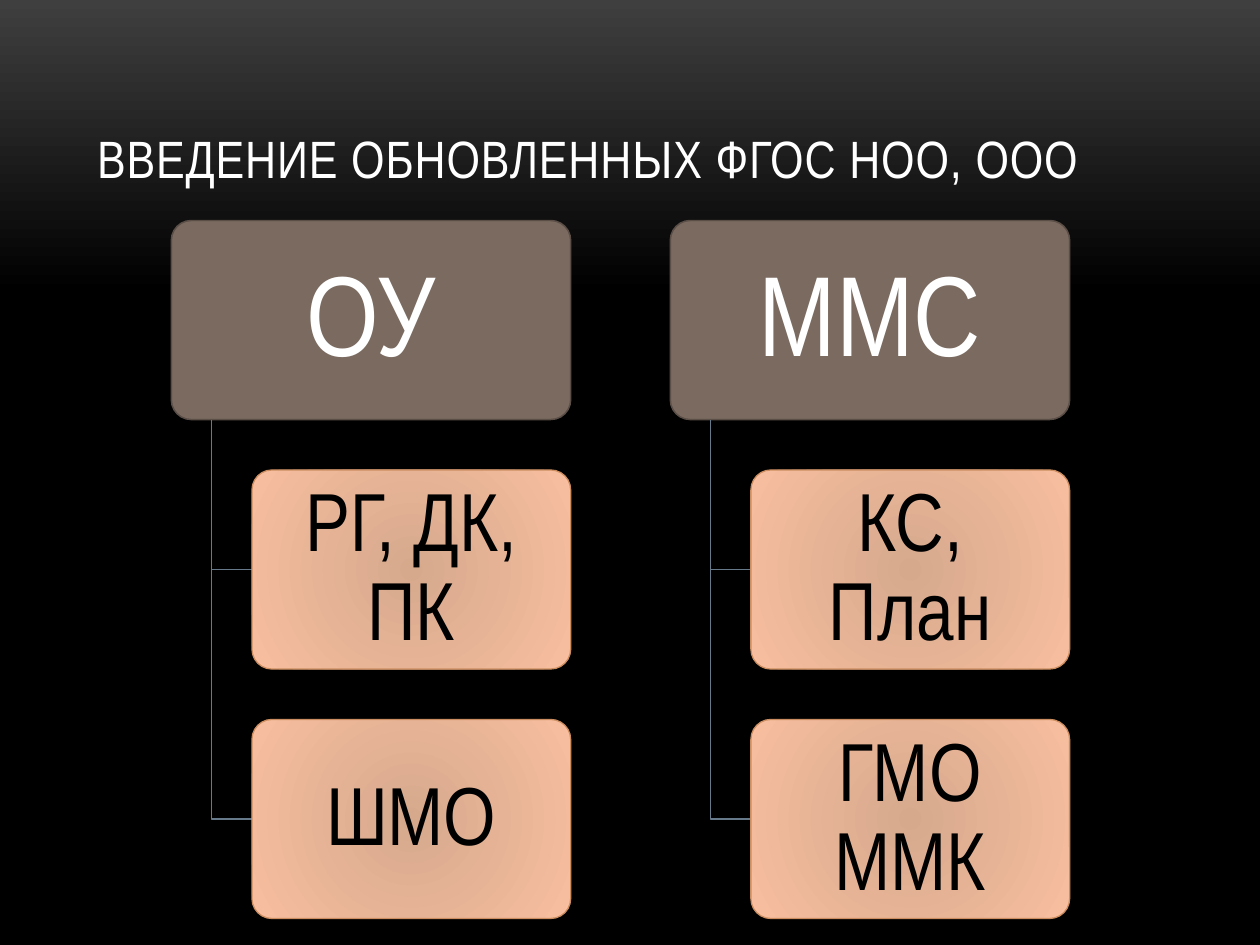
from lxml import etree
from pptx import Presentation
from pptx.dml.color import RGBColor
from pptx.enum.shapes import MSO_SHAPE
from pptx.enum.text import MSO_ANCHOR, PP_ALIGN
from pptx.oxml.ns import qn
from pptx.util import Inches, Pt

TITLE = "ВВЕДЕНИЕ ОБНОВЛЕННЫХ ФГОС НОО, ООО"
BRANCHES = [
    ("ОУ", ["РГ, ДК, ПК", "ШМО"]),
    ("ММС", ["КС, План", "ГМО ММК"]),
]

FONT = "Arial Narrow"
WHITE = RGBColor(0xFF, 0xFF, 0xFF)
BLACK = RGBColor(0, 0, 0)
CHARCOAL = RGBColor(0x3F, 0x3F, 0x3F)
BROWN = RGBColor(0x7A, 0x6A, 0x60)
BROWN_EDGE = RGBColor(0x5A, 0x4E, 0x47)
PEACH_CORE = RGBColor(0xD6, 0xA9, 0x8D)
PEACH = RGBColor(0xF8, 0xBE, 0x9F)
PEACH_EDGE = RGBColor(0xCC, 0x8E, 0x60)
LINK = RGBColor(0x65, 0x79, 0x8B)

LEFT, TOP = 1.36, 1.75
HEAD_WIDTH, CHILD_WIDTH, HEIGHT = 3.17, 2.53, 1.58
COLUMN_STEP, ROW_STEP = 3.96, 1.98
TRUNK_OFFSET = 0.32
CHILD_OFFSET = 2 * TRUNK_OFFSET


def write_text(frame, text, size, color, align=PP_ALIGN.CENTER,
               anchor=MSO_ANCHOR.MIDDLE, insets=(0.1, 0.05),
               line_spacing=0.9, tracking=None):
    frame.word_wrap = True
    frame.vertical_anchor = anchor
    frame.margin_left = frame.margin_right = Inches(insets[0])
    frame.margin_top = frame.margin_bottom = Inches(insets[1])
    para = frame.paragraphs[0]
    para.alignment = align
    para.line_spacing = line_spacing
    span = para.add_run()
    span.text = text
    span.font.name = FONT
    span.font.size = Pt(size)
    span.font.color.rgb = color
    if tracking:
        span.font._element.set("spc", str(int(tracking * 100)))


def set_gradient(fill, stops):
    fill.gradient()
    for stop, (position, color) in zip(fill.gradient_stops, stops):
        stop.position = position
        stop.color.rgb = color


def make_radial(shape):
    """Turn the shape's linear gradient into a circular one."""
    gradient = shape._element.spPr.find(qn("a:gradFill"))
    gradient.remove(gradient.find(qn("a:lin")))
    circle = etree.SubElement(gradient, qn("a:path"), path="circle")
    etree.SubElement(circle, qn("a:fillToRect"),
                     l="100000", t="100000", r="100000", b="100000")


def set_line(shape, color, width):
    shape.shadow.inherit = False
    shape.line.color.rgb = color
    shape.line.width = Pt(width)


def add_box(page, left, top, width):
    box = page.shapes.add_shape(MSO_SHAPE.ROUNDED_RECTANGLE, Inches(left),
                                Inches(top), Inches(width), Inches(HEIGHT))
    box.adjustments[0] = 0.1
    return box


def add_head(page, text, left):
    box = add_box(page, left, TOP, HEAD_WIDTH)
    box.fill.solid()
    box.fill.fore_color.rgb = BROWN
    set_line(box, BROWN_EDGE, 0.85)
    write_text(box.text_frame, text, 65, WHITE, insets=(0.14, 0.09))


def add_child(page, text, left, top):
    box = add_box(page, left, top, CHILD_WIDTH)
    set_gradient(box.fill, [(0, PEACH_CORE), (1, PEACH)])
    make_radial(box)
    set_line(box, PEACH_EDGE, 0.75)
    write_text(box.text_frame, text, 47, BLACK, insets=(0.1, 0.07))


def add_elbow(page, left, top, right, bottom):
    builder = page.shapes.build_freeform(Inches(left), Inches(top))
    corners = [(left, bottom), (right, bottom)]
    builder.add_line_segments([(Inches(x), Inches(y)) for x, y in corners],
                              close=False)
    elbow = builder.convert_to_shape()
    elbow.fill.background()
    set_line(elbow, LINK, 0.85)


def main():
    deck = Presentation()
    deck.slide_width, deck.slide_height = Inches(10), Inches(7.5)
    page = deck.slides.add_slide(deck.slide_layouts[5])
    background = page.background.fill
    set_gradient(background, [(0, CHARCOAL), (0.31, BLACK)])
    background.gradient_angle = 270

    title = page.shapes.title
    title.left, title.top = Inches(0.67), Inches(0.3)
    title.width, title.height = Inches(8.67), Inches(1.25)
    write_text(title.text_frame, TITLE, 30, WHITE, align=PP_ALIGN.LEFT,
               anchor=MSO_ANCHOR.BOTTOM, line_spacing=1.0, tracking=0.5)

    for column, (head, children) in enumerate(BRANCHES):
        left = LEFT + column * COLUMN_STEP
        child_left = left + CHILD_OFFSET
        add_head(page, head, left)
        for row, child in enumerate(children, start=1):
            top = TOP + row * ROW_STEP
            add_elbow(page, left + TRUNK_OFFSET, TOP + HEIGHT,
                      child_left, top + HEIGHT / 2)
            add_child(page, child, child_left, top)

    deck.save("out.pptx")


if __name__ == "__main__":
    main()
